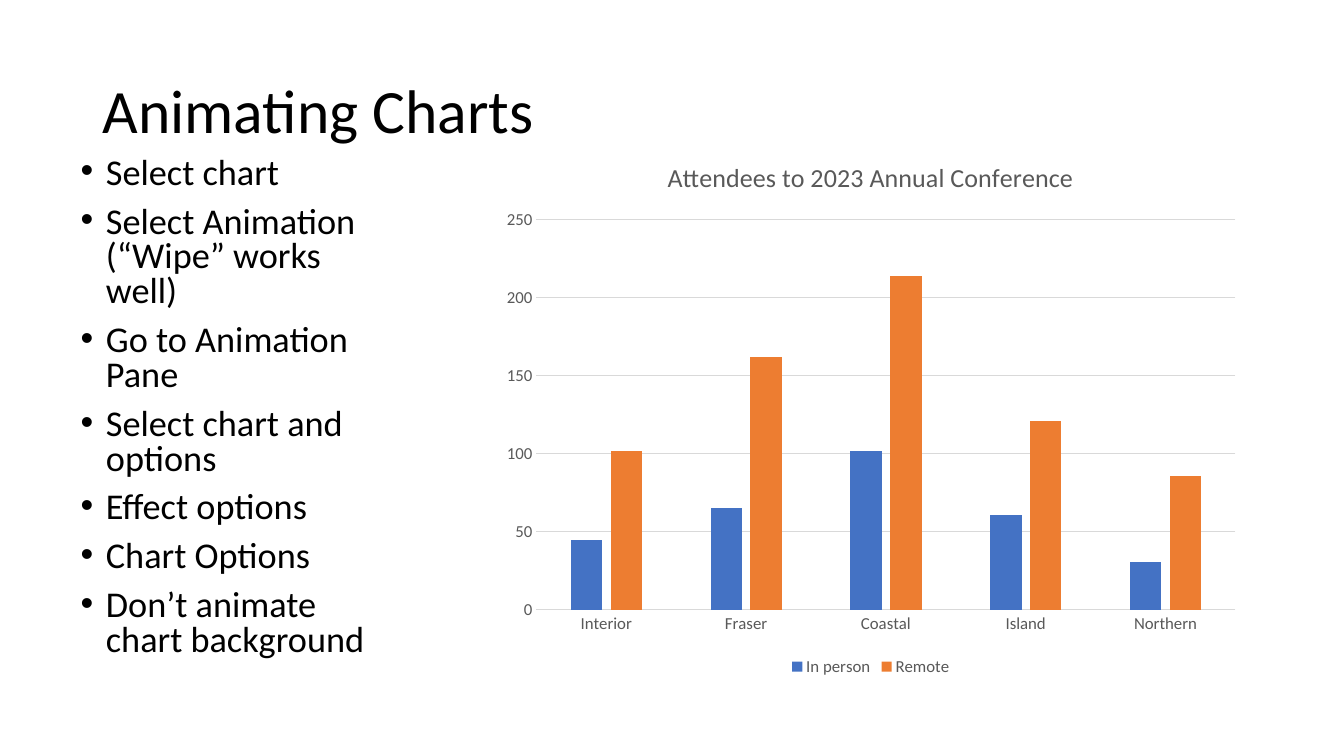
from lxml.etree import SubElement
from pptx import Presentation
from pptx.chart.data import CategoryChartData
from pptx.dml.color import RGBColor
from pptx.enum.chart import XL_CHART_TYPE, XL_LEGEND_POSITION, XL_TICK_MARK
from pptx.enum.text import MSO_ANCHOR
from pptx.oxml.ns import qn
from pptx.util import Cm, Pt

# Content
HEADING = "Animating Charts"
STEPS = [
    "Select chart",
    "Select Animation (“Wipe” works well)",
    "Go to Animation Pane",
    "Select chart and options",
    "Effect options",
    "Chart Options",
    "Don’t animate chart background",
]
CHART_TITLE = "Attendees to 2023 Annual Conference"
REGIONS = ["Interior", "Fraser", "Coastal", "Island", "Northern"]
ATTENDEES = {
    "In person": ((45, 65, 102, 61, 31), "4472C4"),
    "Remote": ((102, 162, 214, 121, 86), "ED7D31"),
}

# Places in centimetres: left, top, width, height
HEADING_BOX = (2.34, 1.02, 29.21, 3.68)
CHART_BOX = (12.37, 3.48, 19.15, 13.67)
STEPS_BOX = (1.78, 3.84, 8.56, 13.34)
PLOT_SHARE = {"x": 0.06, "y": 0.15, "w": 0.92, "h": 0.72}
STEP_INDENT = Cm(0.64)

# Formats
BLACK, GREY, GRID = "000000", "595959", "D9D9D9"
STEP_FORMAT = {"line_spacing": 0.8, "space_before": Pt(10)}
AXIS_FORMAT = {
    "major_tick_mark": XL_TICK_MARK.NONE,
    "minor_tick_mark": XL_TICK_MARK.NONE,
}
VALUE_FORMAT = {"minimum_scale": 0, "maximum_scale": 250, "major_unit": 50}
LEGEND_FORMAT = {"position": XL_LEGEND_POSITION.BOTTOM, "include_in_layout": False}
COLUMN_FORMAT = {"gap_width": 219, "overlap": -27, "vary_by_categories": False}


def apply(target, values):
    for name, value in values.items():
        setattr(target, name, value)


def rgb(colour):
    return RGBColor.from_string(colour)


def set_font(font, size, colour):
    apply(font, {"name": "Calibri", "size": Pt(size), "bold": False})
    font.color.rgb = rgb(colour)


def set_line(line, colour):
    line.color.rgb = rgb(colour)
    line.width = Pt(0.75)


def add_text(slide, box, lines, size, anchor, paragraph_format):
    frame = slide.shapes.add_textbox(*map(Cm, box)).text_frame
    apply(frame, {"word_wrap": True, "vertical_anchor": anchor})
    frame.text = "\n".join(lines)
    for paragraph in frame.paragraphs:
        apply(paragraph, paragraph_format)
        set_font(paragraph.runs[0].font, size, BLACK)
    return frame


def add_bullet(paragraph):
    properties = paragraph._p.get_or_add_pPr()
    properties.set("marL", str(STEP_INDENT))
    properties.set("indent", str(-STEP_INDENT))
    SubElement(properties, qn("a:buFont"), typeface="Arial")
    SubElement(properties, qn("a:buChar"), char="•")


def place_plot(chart):
    plot_area = chart._chartSpace.chart.plotArea
    layout = plot_area.find(qn("c:layout"))
    if layout is None:
        layout = SubElement(plot_area, qn("c:layout"))
        plot_area.insert(0, layout)
    manual = SubElement(layout, qn("c:manualLayout"))
    settings = {"layoutTarget": "inner", "xMode": "edge", "yMode": "edge", **PLOT_SHARE}
    for name, value in settings.items():
        SubElement(manual, qn(f"c:{name}"), val=str(value))


def add_attendance(slide):
    attendance = CategoryChartData()
    attendance.categories = REGIONS
    for name, (counts, _) in ATTENDEES.items():
        attendance.add_series(name, counts)
    chart = slide.shapes.add_chart(
        XL_CHART_TYPE.COLUMN_CLUSTERED, *map(Cm, CHART_BOX), attendance
    ).chart
    set_font(chart.font, 10, BLACK)

    # Title and legend
    chart.has_title = True
    chart.chart_title.include_in_layout = False
    chart.chart_title.text_frame.text = CHART_TITLE
    set_font(chart.chart_title.text_frame.paragraphs[0].runs[0].font, 18.6, GREY)
    chart.has_legend = True
    apply(chart.legend, LEGEND_FORMAT)
    set_font(chart.legend.font, 12, GREY)

    # Axes
    for axis in (chart.category_axis, chart.value_axis):
        apply(axis, AXIS_FORMAT)
        set_font(axis.tick_labels.font, 12, GREY)
    set_line(chart.category_axis.format.line, GRID)
    apply(chart.value_axis, VALUE_FORMAT)
    chart.value_axis.format.line.fill.background()
    set_line(chart.value_axis.major_gridlines.format.line, GRID)

    # Columns
    columns = chart.plots[0]
    apply(columns, COLUMN_FORMAT)
    for series, (_, colour) in zip(columns.series, ATTENDEES.values()):
        series.format.fill.solid()
        series.format.fill.fore_color.rgb = rgb(colour)
    place_plot(chart)


def main():
    deck = Presentation()
    apply(deck, {"slide_width": Cm(33.87), "slide_height": Cm(19.05)})
    slide = deck.slides.add_slide(deck.slide_layouts[6])

    add_text(slide, HEADING_BOX, [HEADING], 44, MSO_ANCHOR.MIDDLE, {"line_spacing": 0.9})
    add_attendance(slide)
    steps = add_text(slide, STEPS_BOX, STEPS, 25.9, MSO_ANCHOR.TOP, STEP_FORMAT)
    for paragraph in steps.paragraphs:
        add_bullet(paragraph)

    deck.save("out.pptx")


if __name__ == "__main__":
    main()
